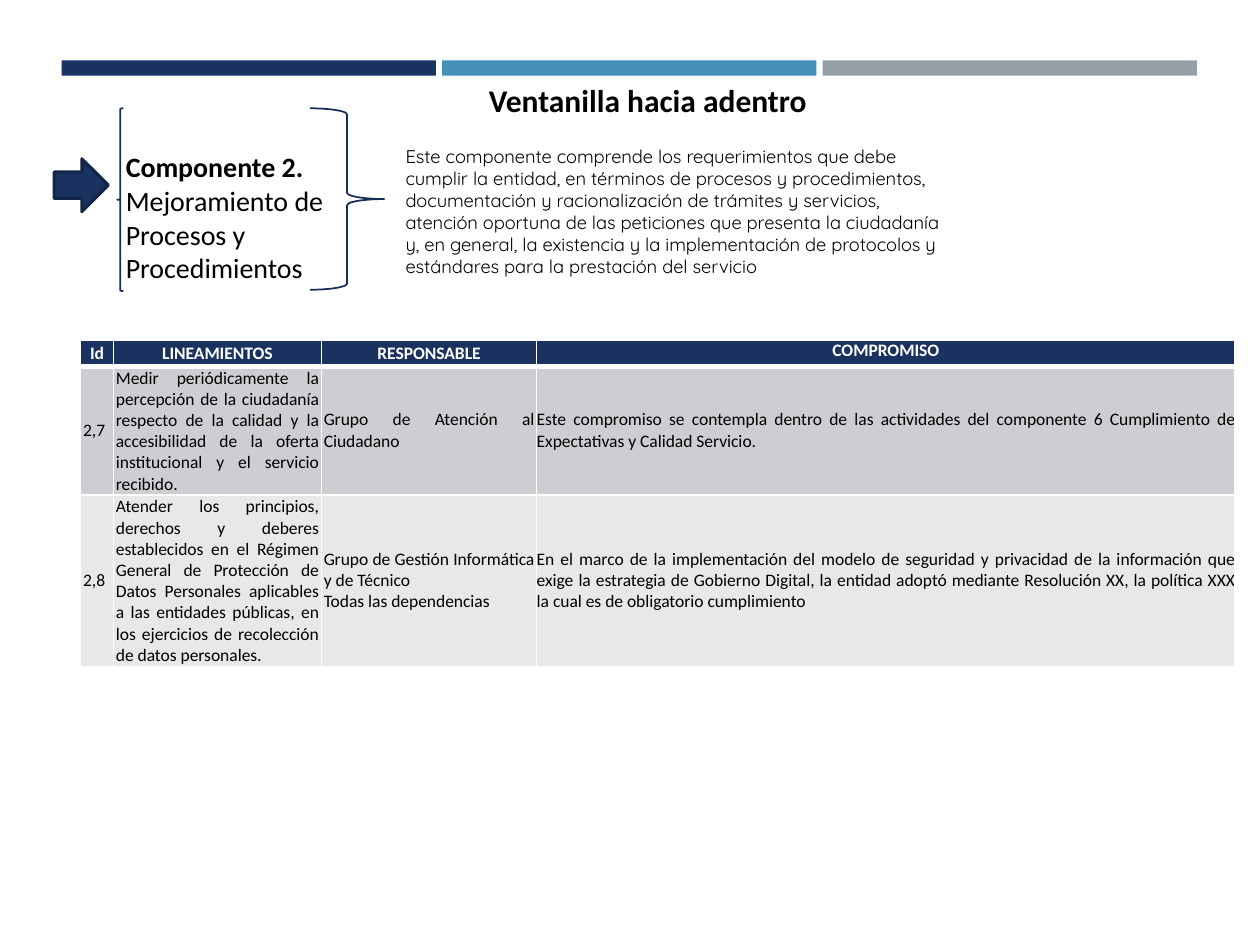
from pptx import Presentation
from pptx.dml.color import RGBColor as Rgb
from pptx.enum.shapes import MSO_SHAPE as Kind
from pptx.enum.text import MSO_ANCHOR as Anchor, PP_ALIGN as Align
from pptx.oxml import parse_xml
from pptx.util import Inches, Pt

HUES = {
    "navy": "1A3260", "blue": "4590B8", "gray": "969FA7",
    "edge": "132547", "brace": "172D56", "black": "000000",
    "white": "FFFFFF", "dark": "CDCED2", "light": "E8E8EA",
}
UNIT = Inches(10) // 100
NS = "http://schemas.openxmlformats.org/drawingml/2006/main"

HEADS = ["Id", "LINEAMIENTOS", "RESPONSABLE", "COMPROMISO"]
ROWS = [
    ["2,7",
     "Medir periódicamente la percepción de la ciudadanía respecto de la "
     "calidad y la accesibilidad de la oferta institucional y el servicio "
     "recibido.",
     "Grupo de Atención al Ciudadano",
     "Este compromiso se contempla dentro de las actividades del componente "
     "6 Cumplimiento de Expectativas y Calidad Servicio."],
    ["2,8",
     "Atender los principios, derechos y deberes establecidos en el Régimen "
     "General de Protección de Datos Personales aplicables a las entidades "
     "públicas, en los ejercicios de recolección de datos personales.",
     "Grupo de Gestión Informática y de Técnico\nTodas las dependencias",
     "En el marco de la implementación del modelo de seguridad y privacidad "
     "de la información que exige la estrategia de Gobierno Digital, la "
     "entidad adoptó mediante Resolución XX, la política XXX la cual es de "
     "obligatorio cumplimiento"],
]
ABOUT = (
    "Este componente comprende los requerimientos que debe cumplir la "
    "entidad, en términos de procesos y procedimientos, documentación y "
    "racionalización de trámites y servicios, atención oportuna de las "
    "peticiones que presenta la ciudadanía y, en general, la existencia y "
    "la implementación de protocolos y estándares para la prestación del "
    "servicio"
)


def hue(name):
    return Rgb.from_string(HUES[name])


def span(*vals):
    return [round(val * UNIT) for val in vals]


def write(frame, text, size=10, font="Calibri", color="black", bold=False,
          lead="", align=Align.LEFT):
    for num, line in enumerate(text.split("\n")):
        para = frame.add_paragraph() if num else frame.paragraphs[0]
        para.alignment = align
        parts = [(lead, True), (line, bold)] if lead else [(line, bold)]
        for part, heavy in parts:
            run = para.add_run()
            run.text = part
            run.font.size = Pt(size)
            run.font.name = font
            run.font.bold = heavy
            run.font.color.rgb = hue(color)


def draw(slide, kind, area, fill=None, edge=None, width=1):
    shape = slide.shapes.add_shape(kind, *span(*area))
    shape.shadow.inherit = False
    if fill:
        shape.fill.solid()
        shape.fill.fore_color.rgb = hue(fill)
    else:
        shape.fill.background()
    if edge:
        shape.line.color.rgb = hue(edge)
        shape.line.width = Pt(width)
    else:
        shape.line.fill.background()


def label(slide, area, text, **style):
    frame = slide.shapes.add_textbox(*span(*area)).text_frame
    frame.word_wrap = True
    write(frame, text, **style)


def head(slide, area, text, **style):
    title = slide.shapes.title
    title.left, title.top, title.width, title.height = span(*area)
    title.text_frame.vertical_anchor = Anchor.TOP
    write(title.text_frame, text, **style)


def rule(cell, base):
    props = cell._tc.get_or_add_tcPr()
    for num, side in enumerate(["lnL", "lnR", "lnT", "lnB"]):
        width = Pt(base if side == "lnB" else 1)
        props.insert(num, parse_xml(
            f'<a:{side} xmlns:a="{NS}" w="{width}"><a:solidFill>'
            f'<a:srgbClr val="{HUES["white"]}"/></a:solidFill></a:{side}>'))


def fill_cell(cell, text, fill, pad, base=1, mid=True, **style):
    cell.margin_left = cell.margin_right = Inches(pad[0])
    cell.margin_top = cell.margin_bottom = Inches(pad[1])
    cell.vertical_anchor = Anchor.MIDDLE if mid else Anchor.TOP
    cell.fill.solid()
    cell.fill.fore_color.rgb = hue(fill)
    write(cell.text_frame, text, **style)
    rule(cell, base)


def grid(slide, left, top, cols, rows):
    area = span(left, top, sum(cols), sum(rows))
    table = slide.shapes.add_table(len(rows), len(cols), *area).table
    for col, size in zip(table.columns, span(*cols)):
        col.width = size
    for row, size in zip(table.rows, span(*rows)):
        row.height = size
    last = len(cols) - 1
    for num, text in enumerate(HEADS):
        pad = (0, 0) if num == last else (0.03, 0.02)
        fill_cell(table.cell(0, num), text, "navy", pad, base=3, mid=False,
                  color="white", bold=True, align=Align.CENTER)
    for row, (texts, fill) in enumerate(zip(ROWS, ["dark", "light"]), 1):
        for num, text in enumerate(texts):
            pad = (0, 0) if num == last else (0.02, 0.01)
            fill_cell(table.cell(row, num), text, fill, pad,
                      base=1, align=Align.JUSTIFY)


def main():
    deck = Presentation()
    deck.slide_width, deck.slide_height = span(100, 75)
    slide = deck.slides.add_slide(deck.slide_layouts[5])
    for num, name in enumerate(["navy", "blue", "gray"]):
        draw(slide, Kind.RECTANGLE, (4.9 + num * 30.2, 4.8, 29.7, 1.2), name)
    draw(slide, Kind.RIGHT_ARROW, (4.3, 12.6, 4.3, 4.2), "navy", "edge", 1.75)
    draw(slide, Kind.LEFT_BRACE, (9.3, 8.6, 0.5, 14.5), edge="brace")
    draw(slide, Kind.RIGHT_BRACE, (24.6, 8.6, 5.9, 14.4), edge="brace")
    label(slide, (9, 11.4, 19.8, 11.8),
          "Mejoramiento de Procesos y Procedimientos",
          size=16, lead="Componente 2. ")
    label(slide, (31.2, 11, 44.9, 13.4), ABOUT, size=10.5, font="Quicksand")
    head(slide, (37.8, 5.9, 30.4, 4), "Ventanilla hacia adentro",
         size=18, bold=True)
    grid(slide, 6.4, 27, [2.6, 16.5, 17.1, 55.4], [2, 10.2, 13.6])
    deck.save("out.pptx")


if __name__ == "__main__":
    main()
